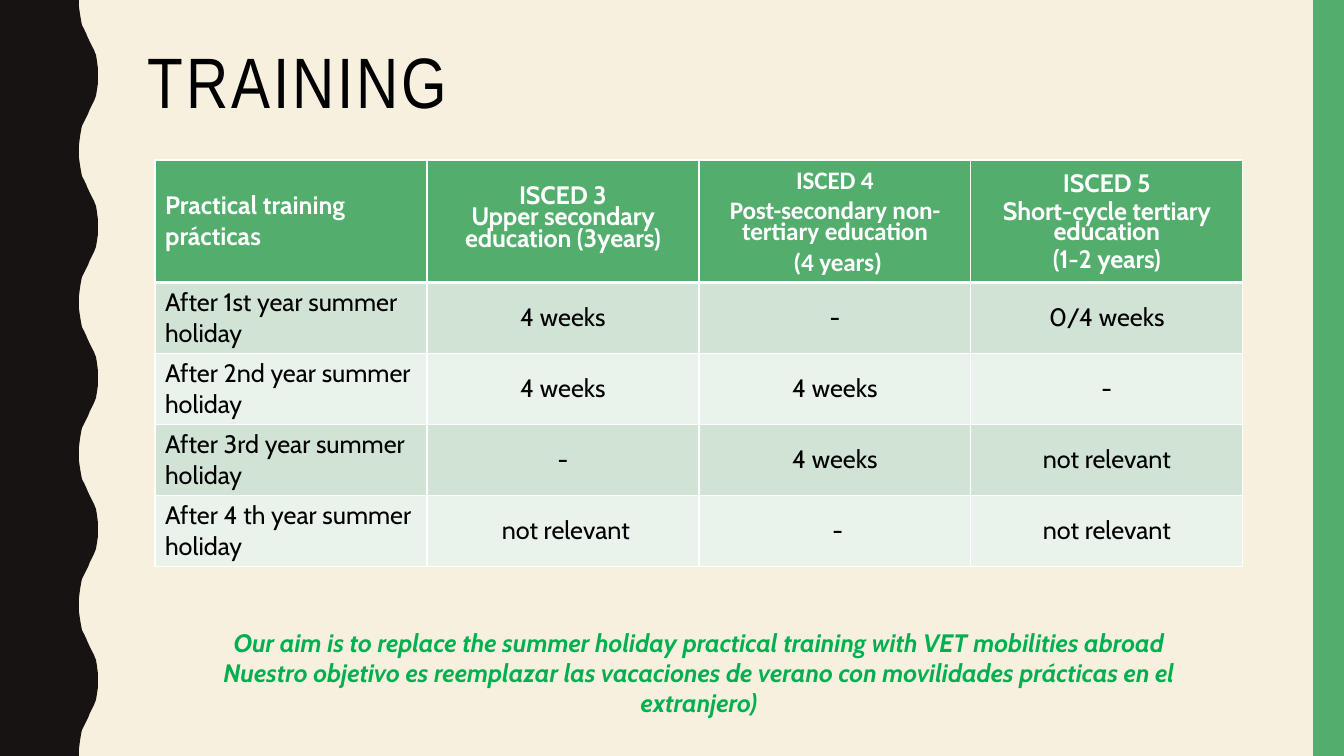
from lxml.etree import SubElement
from pptx import Presentation
from pptx.dml.color import RGBColor
from pptx.enum.shapes import MSO_SHAPE
from pptx.enum.text import MSO_ANCHOR, PP_ALIGN
from pptx.oxml.ns import qn
from pptx.util import Pt

PX = 914400 / 100.8
COLOURS = {
    "paper": "F7F0DF", "wave": "171312", "green": "53AE6E", "aim": "00B050",
    "odd": "D1E3D5", "even": "E9F2EB", "white": "FFFFFF", "black": "000000",
}
FORMATS = {
    "title": {"size": Pt(51), "name": "Arial Narrow"},
    "header": {"size": Pt(18), "name": "Cabin", "bold": True},
    "header_alt": {"size": Pt(18), "name": "Calibri", "bold": True},
    "body": {"size": Pt(18), "name": "Cabin", "bold": False},
    "aim": {"size": Pt(18), "name": "Cabin", "bold": True, "italic": True},
}
LEFT = {"alignment": PP_ALIGN.LEFT}
CENTRE = {"alignment": PP_ALIGN.CENTER}
TIGHT = CENTRE | {"line_spacing": Pt(15.4)}
SPACED = TIGHT | {"space_before": Pt(6.2)}
SHORT = CENTRE | {"line_spacing": Pt(14.3), "space_before": Pt(5.8)}

HEADERS = [
    ("header", 0, [("Practical training", LEFT), ("prácticas", LEFT)]),
    ("header", -10, [("ISCED 3", TIGHT),
                     ("Upper secondary education (3years)", TIGHT)]),
    ("header_alt", -10, [("ISCED 4", CENTRE),
                         ("Post-secondary non-tertiary education", SPACED),
                         (" (4 years)", SPACED)]),
    ("header", -10, [("ISCED 5", CENTRE),
                     ("Short-cycle tertiary education", SHORT),
                     ("(1-2 years)", SHORT)]),
]
WEEKS = [
    ("After 1st year summer holiday", "4 weeks", " - ", "0/4 weeks"),
    ("After 2nd year summer holiday", "4 weeks", "4 weeks", " - "),
    ("After 3rd year summer holiday", " - ", "4 weeks", "not relevant"),
    ("After 4 th year summer holiday", " not relevant", " -", "not relevant"),
]
AIMS = [
    "Our aim is to replace the summer holiday practical training with VET mobilities abroad",
    "Nuestro objetivo es reemplazar las vacaciones de verano con movilidades prácticas en el extranjero)",
]
CREST_X = [79, 79, 80, 81, 82, 84, 86, 88, 90, 92, 94, 96, 97, 98, 98]
CREST_Y = [0, 7, 14, 20, 25, 29, 33, 38, 42, 46, 50, 55, 61, 69]
HALF_WAVE = 75.6


def px(length):
    return round(length * PX)


def colour(name):
    return RGBColor.from_string(COLOURS[name])


def apply(target, values):
    for attribute, value in values.items():
        setattr(target, attribute, value)


class SlideBuilder:
    """Draws styled elements on one slide."""

    def __init__(self, slide):
        self.slide = slide
        slide.background.fill.solid()
        slide.background.fill.fore_color.rgb = colour("paper")

    def paint(self, shape, fill):
        shape.shadow.inherit = False
        shape.fill.solid()
        shape.fill.fore_color.rgb = colour(fill)
        shape.line.fill.background()

    def bar(self, left, top, width, height, fill):
        self.paint(self.slide.shapes.add_shape(
            MSO_SHAPE.RECTANGLE, px(left), px(top), px(width), px(height)), fill)

    def outline(self, points, fill):
        builder = self.slide.shapes.build_freeform(*points[0], scale=PX)
        builder.add_line_segments(points[1:], close=True)
        self.paint(builder.convert_to_shape(), fill)

    def fill_text(self, frame, lines, style, ink, spacing=0):
        for index, (words, layout) in enumerate(lines):
            paragraph = frame.add_paragraph() if index else frame.paragraphs[0]
            apply(paragraph, layout)
            run = paragraph.add_run()
            run.text = words
            apply(run.font, FORMATS[style])
            run.font.color.rgb = colour(ink)
            if spacing:
                run._r.get_or_add_rPr().set("spc", str(spacing))

    def text(self, left, top, width, height, lines, style, ink, spacing=0):
        frame = self.slide.shapes.add_textbox(
            px(left), px(top), px(width), px(height)).text_frame
        frame.word_wrap = True
        self.fill_text(frame, lines, style, ink, spacing)

    def border(self, cell, weights):
        properties = cell._tc.get_or_add_tcPr()
        for side, weight in weights.items():
            edge = SubElement(properties, qn(f"a:ln{side}"), w=str(Pt(weight)))
            paint = SubElement(edge, qn("a:solidFill"))
            SubElement(paint, qn("a:srgbClr"), val=COLOURS["white"])

    def cell(self, cell, lines, style, ink, fill, weights, spacing=0):
        cell.vertical_anchor = MSO_ANCHOR.MIDDLE
        self.border(cell, weights)
        cell.fill.solid()
        cell.fill.fore_color.rgb = colour(fill)
        self.fill_text(cell.text_frame, lines, style, ink, spacing)

    def table(self, left, top, column_width, header_height, row_height):
        grid = self.slide.shapes.add_table(
            len(WEEKS) + 1, len(HEADERS), px(left), px(top),
            px(column_width * len(HEADERS)),
            px(header_height + row_height * len(WEEKS))).table
        for column in grid.columns:
            column.width = px(column_width)
        for index, row in enumerate(grid.rows):
            row.height = px(row_height if index else header_height)
        for column, (style, spacing, lines) in enumerate(HEADERS):
            self.cell(grid.cell(0, column), lines, style, "white", "green",
                      {"L": 1, "R": 1, "T": 1, "B": 3}, spacing)
        for row, periods in enumerate(WEEKS, 1):
            weights = {"L": 1, "R": 1, "T": 3 if row == 1 else 1, "B": 1}
            for column, words in enumerate(periods):
                self.cell(grid.cell(row, column),
                          [(words, CENTRE if column else LEFT)], "body", "black",
                          "odd" if row % 2 else "even", weights)


def main():
    deck = Presentation()
    deck.slide_width, deck.slide_height = px(1344), px(756)
    training = SlideBuilder(deck.slides.add_slide(deck.slide_layouts[6]))

    wave = [(0, 0)]
    for half in range(10):
        across = CREST_X[::-1] if half % 2 else CREST_X
        wave += [(x, half * HALF_WAVE + y) for x, y in zip(across, CREST_Y)]
    training.outline(wave + [(79, 756), (0, 756)], "wave")
    training.bar(1313, 0, 31, 756, "green")

    training.text(138, 42, 1122, 164, [("TRAINING", {"line_spacing": 0.9})],
                  "title", "black", 200)
    training.table(155, 160, 272, 122, 71)
    training.text(155, 622, 1088, 102, [(aim, CENTRE) for aim in AIMS],
                  "aim", "aim")
    deck.save("out.pptx")


if __name__ == "__main__":
    main()
